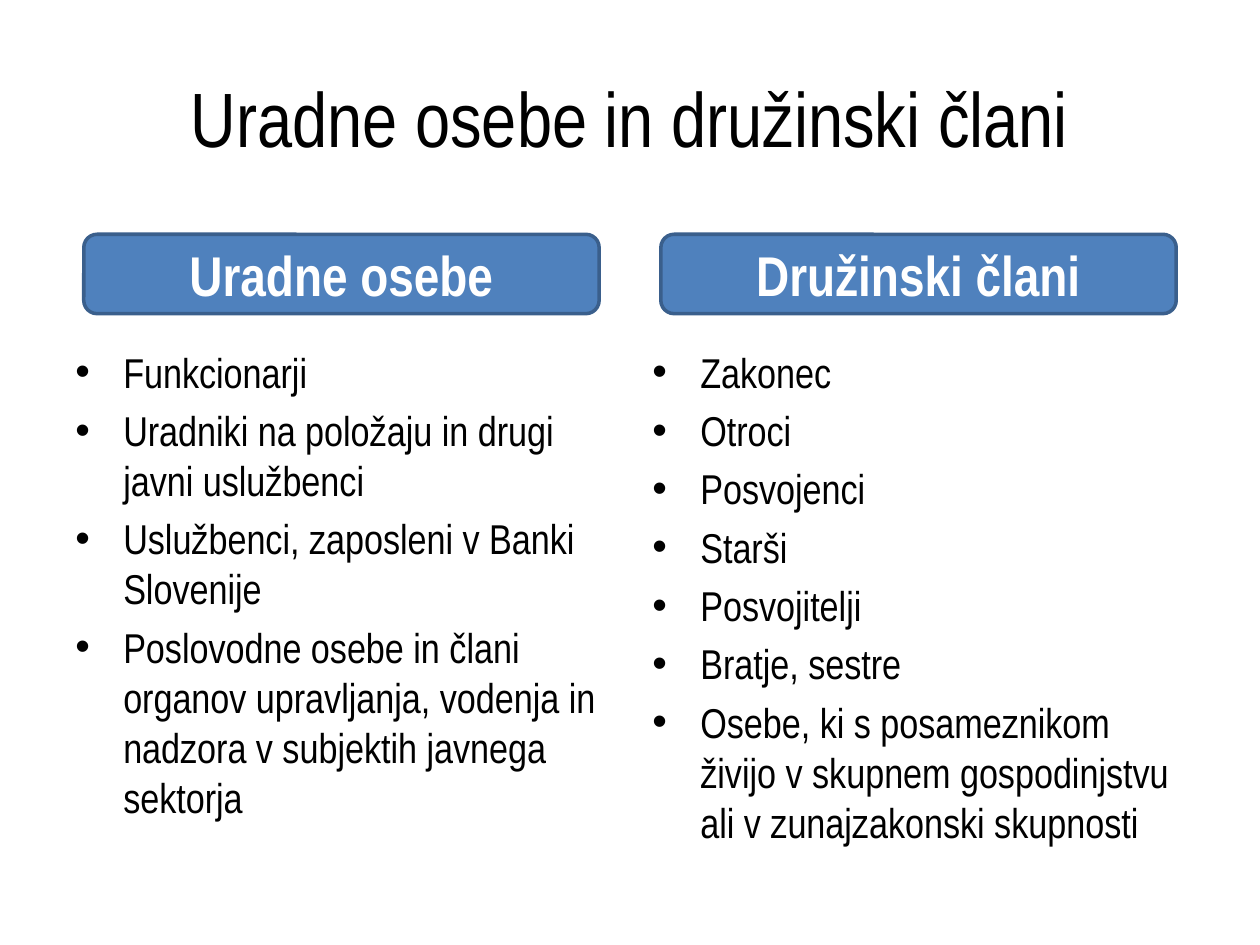
from dataclasses import dataclass

from lxml.etree import SubElement
from pptx import Presentation
from pptx.dml.color import RGBColor
from pptx.enum.shapes import MSO_SHAPE as Preset
from pptx.enum.text import MSO_ANCHOR as Anchor, PP_ALIGN as Align
from pptx.oxml.ns import qn
from pptx.util import Inches, Pt

FONT = "Arial Narrow"
COLORS = {"text": "000000", "header": "4F81BD", "border": "3A5F8C", "header_text": "FFFFFF"}
WIDTH, HEIGHT = Inches(10), Inches(7.5)
MARGIN, COLUMN_WIDTH, COLUMN_STEP = 5, 44.2, 45.8
HEADER_INSET, HEADER_WIDTH = 1.65, 40.9
BULLET_INDENT = Inches(0.38)


@dataclass(frozen=True)
class Region:
    """Position and size in percent of the slide."""

    left: float
    top: float
    width: float
    height: float

    def lengths(self) -> tuple[int, ...]:
        return (
            int(WIDTH * self.left / 100),
            int(HEIGHT * self.top / 100),
            int(WIDTH * self.width / 100),
            int(HEIGHT * self.height / 100),
        )


@dataclass(frozen=True)
class Column:
    heading: str
    items: tuple[str, ...]


COLUMNS = (
    Column(
        "Uradne osebe",
        (
            "Funkcionarji",
            "Uradniki na položaju in drugi javni uslužbenci",
            "Uslužbenci, zaposleni v Banki Slovenije",
            "Poslovodne osebe in člani organov upravljanja, vodenja in nadzora "
            "v subjektih javnega sektorja",
        ),
    ),
    Column(
        "Družinski člani",
        (
            "Zakonec",
            "Otroci",
            "Posvojenci",
            "Starši",
            "Posvojitelji",
            "Bratje, sestre",
            "Osebe, ki s posameznikom živijo v skupnem gospodinjstvu "
            "ali v zunajzakonski skupnosti",
        ),
    ),
)


def color(name: str) -> RGBColor:
    return RGBColor.from_string(COLORS[name])


def style(paragraph, size: float, color_name: str, bold: bool = False) -> None:
    font = paragraph.font
    font.name, font.size, font.bold = FONT, Pt(size), bold
    font.color.rgb = color(color_name)


def write_centered(shape, text: str, size: float, color_name: str, bold: bool = False) -> None:
    frame = shape.text_frame
    frame.word_wrap = True
    frame.vertical_anchor = Anchor.MIDDLE
    paragraph = frame.paragraphs[0]
    paragraph.text = text
    paragraph.alignment = Align.CENTER
    style(paragraph, size, color_name, bold)


def add_header(slide, region: Region, text: str) -> None:
    shape = slide.shapes.add_shape(Preset.ROUNDED_RECTANGLE, *region.lengths())
    shape.shadow.inherit = False
    shape.fill.solid()
    shape.fill.fore_color.rgb = color("header")
    shape.line.color.rgb = color("border")
    shape.line.width = Pt(2)
    write_centered(shape, text, 32, "header_text", bold=True)


def add_bullets(slide, region: Region, items: tuple[str, ...]) -> None:
    frame = slide.shapes.add_textbox(*region.lengths()).text_frame
    frame.word_wrap = True
    for index, item in enumerate(items):
        paragraph = frame.add_paragraph() if index else frame.paragraphs[0]
        paragraph.text = item
        if index:
            paragraph.space_before = Pt(4.75)
        properties = paragraph._p.get_or_add_pPr()
        properties.set("marL", str(BULLET_INDENT))
        properties.set("indent", str(-BULLET_INDENT))
        SubElement(properties, qn("a:buFont"), typeface="Arial")
        SubElement(properties, qn("a:buChar"), char="•")
        style(paragraph, 23.8, "text")


def main() -> None:
    presentation = Presentation()
    presentation.slide_width, presentation.slide_height = WIDTH, HEIGHT
    slide = presentation.slides.add_slide(presentation.slide_layouts[6])
    title = slide.shapes.add_textbox(*Region(MARGIN, 4, 90, 16.67).lengths())
    write_centered(title, "Uradne osebe in družinski člani", 44, "text")
    for index, column in enumerate(COLUMNS):
        left = MARGIN + index * COLUMN_STEP
        add_bullets(slide, Region(left, 36, COLUMN_WIDTH, 53.33), column.items)
        add_header(slide, Region(left + HEADER_INSET, 24.8, HEADER_WIDTH, 8.4), column.heading)
    presentation.save("out.pptx")


if __name__ == "__main__":
    main()
